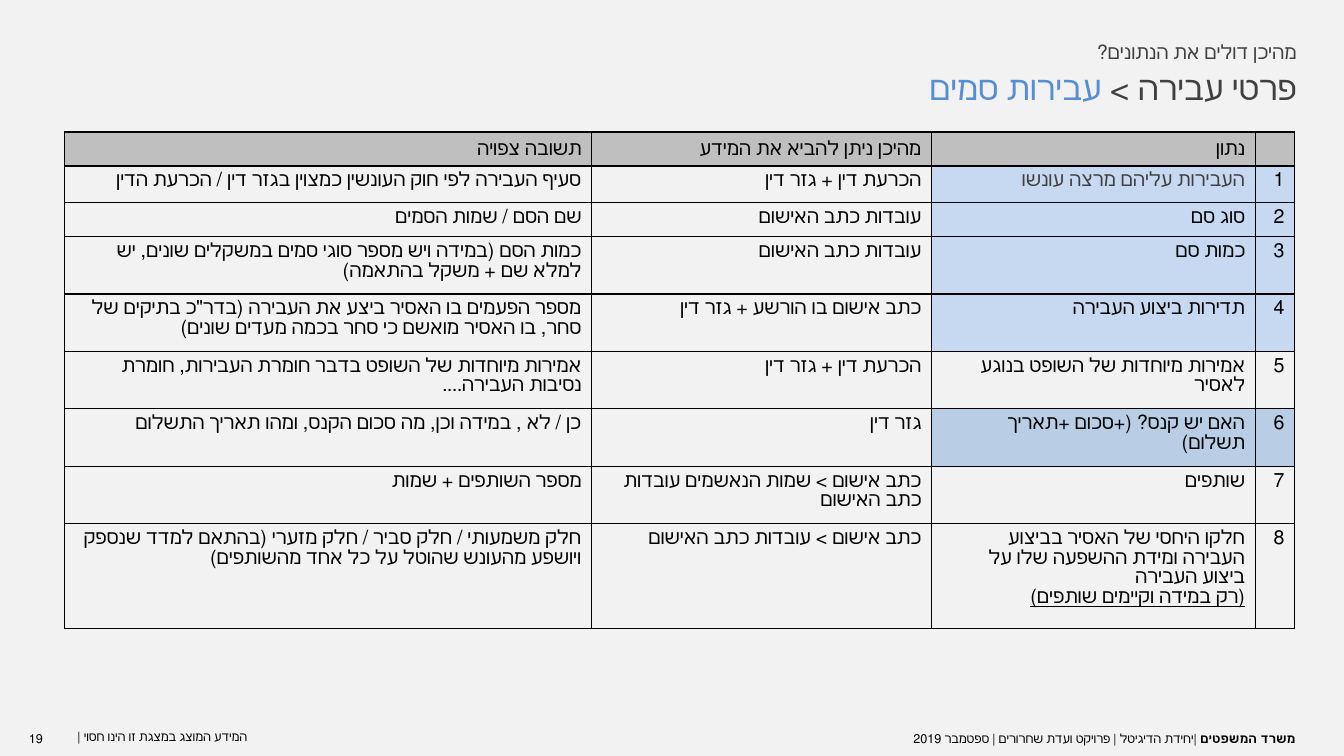
from lxml.etree import SubElement
from pptx import Presentation
from pptx.dml.color import RGBColor
from pptx.enum.text import MSO_ANCHOR, MSO_AUTO_SIZE, PP_ALIGN
from pptx.oxml.ns import qn
from pptx.util import Inches, Pt

THEME = {
    "bg": "F2F2F2", "ink": "000000", "grey": "404040", "accent": "558ED5",
    "head": "BFBFBF", "light": "C6D9F1", "mid": "B9CDE5",
    "title": 24, "body": 14, "foot": 9,
    "main": "Roboto", "answer": "Arial", "plain": "Calibri",
}
SUBTITLE = "מהיכן דולים את הנתונים?"
TITLE = [("פרטי עבירה > ", "grey"), ("עבירות סמים", "accent")]
PAGE = "19"
NOTICE = "המידע המוצג במצגת זו הינו חסוי |"
CREDIT = [("משרד המשפטים ", True),
          ("|יחידת הדיגיטל | פרויקט ועדת שחרורים | ספטמבר 2019", False)]
HEADER = ("תשובה צפויה", "מהיכן ניתן להביא את המידע", "נתון", "")
ROWS = [
    ("סעיף העבירה לפי חוק העונשין כמצוין בגזר דין / הכרעת הדין",
     "הכרעת דין + גזר דין", "העבירות עליהם מרצה עונשו"),
    ("שם הסם / שמות הסמים", "עובדות כתב האישום", "סוג סם"),
    ("כמות הסם (במידה ויש מספר סוגי סמים במשקלים שונים, יש למלא שם + משקל בהתאמה)",
     "עובדות כתב האישום", "כמות סם"),
    ("מספר הפעמים בו האסיר ביצע את העבירה (בדר\"כ בתיקים של סחר, בו האסיר מואשם כי סחר בכמה מעדים שונים)",
     "כתב אישום בו הורשע + גזר דין", "תדירות ביצוע העבירה"),
    ("אמירות מיוחדות של השופט בדבר חומרת העבירות, חומרת נסיבות העבירה....",
     "הכרעת דין + גזר דין", "אמירות מיוחדות של השופט בנוגע לאסיר"),
    ("כן / לא , במידה וכן, מה סכום הקנס, ומהו תאריך התשלום",
     "גזר דין", "האם יש קנס? (+סכום +תאריך תשלום)"),
    ("מספר השותפים + שמות",
     "כתב אישום > שמות הנאשמים עובדות כתב האישום", "שותפים"),
    ("חלק משמעותי / חלק סביר / חלק מזערי (בהתאם למדד שנספק ויושפע מהעונש שהוטל על כל אחד מהשותפים)",
     "כתב אישום > עובדות כתב האישום",
     "חלקו היחסי של האסיר בביצוע העבירה ומידת ההשפעה שלו על ביצוע העבירה"),
]
CONDITION = "(רק במידה וקיימים שותפים)"
COLS = [5.23, 3.37, 3.21, 0.39]
HEIGHTS = [0.33, 0.36, 0.34] + [0.57] * 5 + [1.04]
ROW_FILLS = {1: "light", 2: "light", 3: "light", 4: "light", 6: "mid"}
FONTS = {(1, 2): "main", (2, 1): "main", (3, 1): "main"}


def add_text(p, text, size, font, color="ink", **formats):
    r = p.add_run()
    r.text = text
    r.font.color.rgb = RGBColor.from_string(THEME[color])
    formats.update(size=Pt(THEME[size]), name=THEME[font])
    for key, value in formats.items():
        setattr(r.font, key, value)


def set_rtl(p, align=PP_ALIGN.RIGHT):
    p.alignment = align
    p._p.get_or_add_pPr().set("rtl", "1")
    return p


def set_frame(shape, pad_x=0.1, pad_y=0.05, align=PP_ALIGN.RIGHT):
    formats = {
        "word_wrap": True, "auto_size": MSO_AUTO_SIZE.NONE,
        "vertical_anchor": MSO_ANCHOR.TOP,
        "margin_left": Inches(pad_x), "margin_right": Inches(pad_x),
        "margin_top": Inches(pad_y), "margin_bottom": Inches(pad_y),
    }
    tf = shape.text_frame
    for key, value in formats.items():
        setattr(tf, key, value)
    return set_rtl(tf.paragraphs[0], align)


def add_box(s, box, **formats):
    return set_frame(s.shapes.add_textbox(*map(Inches, box)), **formats)


def set_borders(cell):
    tcPr = cell._tc.get_or_add_tcPr()
    for side in ("lnL", "lnR", "lnT", "lnB"):
        ln = SubElement(tcPr, qn(f"a:{side}"), w=str(Pt(1)))
        fill = SubElement(ln, qn("a:solidFill"))
        SubElement(fill, qn("a:srgbClr"), val=THEME["ink"])


def fill_cell(cell, row, col, text):
    set_borders(cell)
    fill = "head" if row == 0 else ROW_FILLS.get(row) if col > 1 else None
    if fill:
        cell.fill.solid()
        cell.fill.fore_color.rgb = RGBColor.from_string(THEME[fill])
    else:
        cell.fill.background()
    cell.vertical_anchor = MSO_ANCHOR.TOP if row else MSO_ANCHOR.MIDDLE
    p = set_rtl(cell.text_frame.paragraphs[0])
    if not text:
        SubElement(p._p, qn("a:endParaRPr"), sz=str(THEME["body"] * 100))
        return
    font = "answer" if row == 0 or col == 0 else FONTS.get((row, col), "plain")
    add_text(p, text, "body", font, "grey" if (row, col) == (1, 2) else "ink")


def add_grid(s):
    cells = [HEADER] + [(*row, str(n)) for n, row in enumerate(ROWS, 1)]
    box = (0.64, 1.31, sum(COLS), sum(HEIGHTS))
    table = s.shapes.add_table(len(cells), len(COLS), *map(Inches, box)).table
    table.first_row = table.horz_banding = False
    for column, width in zip(table.columns, COLS):
        column.width = Inches(width)
    for i, (row, height) in enumerate(zip(cells, HEIGHTS)):
        table.rows[i].height = Inches(height)
        for j, text in enumerate(row):
            fill_cell(table.cell(i, j), i, j, text)
    p = set_rtl(table.cell(len(ROWS), 2).text_frame.add_paragraph())
    add_text(p, CONDITION, "body", "plain", underline=True)


def main():
    prs = Presentation()
    prs.slide_width, prs.slide_height = Inches(13.33), Inches(7.5)
    s = prs.slides.add_slide(prs.slide_layouts[5])
    s.background.fill.solid()
    s.background.fill.fore_color.rgb = RGBColor.from_string(THEME["bg"])

    title = s.shapes.title
    for key, value in zip(("left", "top", "width", "height"), (7.31, 0.61, 5.65, 0.5)):
        setattr(title, key, Inches(value))
    p = set_frame(title)
    for text, color in TITLE:
        add_text(p, text, "title", "main", color)
    add_text(add_box(s, (9.52, 0.35, 3.44, 0.34)), SUBTITLE, "body", "main", "grey")

    add_grid(s)

    p = add_box(s, (0.03, 7.18, 0.65, 0.31), pad_x=0.15, pad_y=0.07, align=PP_ALIGN.CENTER)
    add_text(p, PAGE, "foot", "plain")
    add_text(add_box(s, (0.21, 7.18, 2.34, 0.31)), NOTICE, "foot", "plain")
    p = add_box(s, (3.78, 7.18, 9.22, 0.3), pad_x=0.15, pad_y=0.07)
    for text, bold in CREDIT:
        add_text(p, text, "foot", "plain", bold=bold)
    prs.save("out.pptx")


if __name__ == "__main__":
    main()
